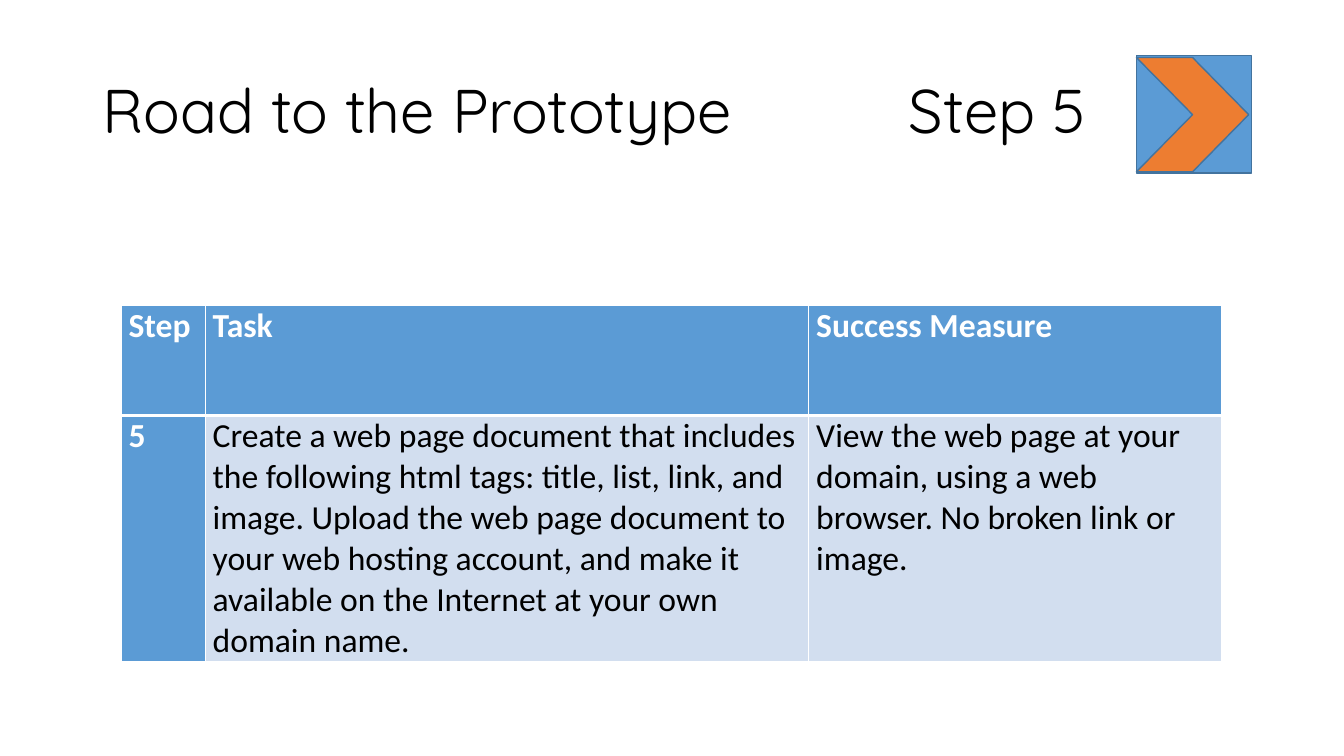
from dataclasses import dataclass

from lxml.etree import SubElement
from pptx import Presentation
from pptx.dml.color import RGBColor
from pptx.enum.shapes import MSO_SHAPE
from pptx.enum.text import MSO_ANCHOR, MSO_AUTO_SIZE, PP_ALIGN
from pptx.oxml.ns import qn
from pptx.util import Cm, Pt

BLUE, ORANGE, OUTLINE = "5B9BD5", "ED7D31", "43739E"
PALE_BLUE, WHITE, BLACK = "D2DEEF", "FFFFFF", "000000"


@dataclass
class IconPart:
    kind: MSO_SHAPE
    left: float
    top: float
    width: float
    height: float
    fill: str


@dataclass
class TableRow:
    height: float
    texts: tuple[str, str, str]
    is_header: bool


ICON_PARTS = [
    IconPart(MSO_SHAPE.ACTION_BUTTON_CUSTOM, 28.64, 1.4, 2.9, 2.96, BLUE),
    IconPart(MSO_SHAPE.CHEVRON, 28.64, 1.45, 2.83, 2.88, ORANGE),
]
COLUMN_WIDTHS = [2.12, 15.21, 10.4]
TABLE_ROWS = [
    TableRow(2.77, ("Step", "Task", "Success Measure"), True),
    TableRow(6.1, (
        "5",
        "Create a web page document that includes the following html tags: "
        "title, list, link, and image. Upload the web page document to your "
        "web hosting account, and make it available on the Internet at your "
        "own domain name.",
        "View the web page at your domain, using a web browser. "
        "No broken link or image.",
    ), False),
]


def color(value: str) -> RGBColor:
    return RGBColor.from_string(value)


def write_text(text_frame, text: str, *, font: str, size: float,
               text_color: str, bold: bool = False):
    paragraph = text_frame.paragraphs[0]
    paragraph.alignment = PP_ALIGN.LEFT
    run = paragraph.add_run()
    run.text = text
    run.font.name = font
    run.font.size = Pt(size)
    run.font.bold = bold
    run.font.color.rgb = color(text_color)
    return paragraph


def add_tab_stops(paragraph, positions: list[float]) -> None:
    tab_list = SubElement(paragraph._p.get_or_add_pPr(), qn("a:tabLst"))
    for position in positions:
        SubElement(tab_list, qn("a:tab"), pos=str(Cm(position)), algn="l")


def add_icon_part(group, part: IconPart) -> None:
    shape = group.shapes.add_shape(part.kind, Cm(part.left), Cm(part.top),
                                   Cm(part.width), Cm(part.height))
    shape.shadow.inherit = False
    shape.fill.solid()
    shape.fill.fore_color.rgb = color(part.fill)
    shape.line.color.rgb = color(OUTLINE)
    shape.line.width = Pt(1)


def set_borders(cell, widths: dict[str, float]) -> None:
    properties = cell._tc.get_or_add_tcPr()
    for index, (side, width) in enumerate(widths.items()):
        line = properties.makeelement(qn(f"a:ln{side}"), {"w": str(Pt(width))})
        fill = SubElement(line, qn("a:solidFill"))
        SubElement(fill, qn("a:srgbClr"), val=WHITE)
        properties.insert(index, line)


def format_cell(cell, text: str, is_heading: bool, is_header: bool) -> None:
    cell.margin_left = cell.margin_right = Cm(0.19)
    cell.margin_top = cell.margin_bottom = 0
    cell.fill.solid()
    cell.fill.fore_color.rgb = color(BLUE if is_heading else PALE_BLUE)
    write_text(cell.text_frame, text, font="Calibri", size=24,
               text_color=WHITE if is_heading else BLACK, bold=is_heading)
    set_borders(cell, {"L": 1, "R": 1, "T": 1 if is_header else 3,
                       "B": 3 if is_header else 1})


def add_task_table(slide) -> None:
    heights = [row.height for row in TABLE_ROWS]
    table = slide.shapes.add_table(
        len(TABLE_ROWS), len(COLUMN_WIDTHS), Cm(3.05), Cm(7.7),
        Cm(sum(COLUMN_WIDTHS)), Cm(sum(heights))).table
    for column, width in zip(table.columns, COLUMN_WIDTHS):
        column.width = Cm(width)
    for row_index, row in enumerate(TABLE_ROWS):
        table.rows[row_index].height = Cm(row.height)
        for column_index, text in enumerate(row.texts):
            format_cell(table.cell(row_index, column_index), text,
                        row.is_header or column_index == 0, row.is_header)


def add_title(slide) -> None:
    title = slide.shapes.title
    title.left, title.top = Cm(2.33), Cm(1.01)
    title.width, title.height = Cm(29.21), Cm(3.68)
    text_frame = title.text_frame
    text_frame.word_wrap = True
    text_frame.auto_size = MSO_AUTO_SIZE.NONE
    text_frame.vertical_anchor = MSO_ANCHOR.MIDDLE
    paragraph = write_text(text_frame, "Road to the Prototype\t\tStep 5",
                           font="Quicksand", size=44, text_color=BLACK)
    paragraph.line_spacing = 0.9
    add_tab_stops(paragraph, [17.78, 20.32])


def main() -> None:
    presentation = Presentation()
    presentation.slide_width, presentation.slide_height = Cm(33.87), Cm(19.05)
    slide = presentation.slides.add_slide(presentation.slide_layouts[5])

    # Title
    add_title(slide)

    # Step icon
    icon = slide.shapes.add_group_shape()
    for part in ICON_PARTS:
        add_icon_part(icon, part)

    # Task table
    add_task_table(slide)

    presentation.save("out.pptx")


if __name__ == "__main__":
    main()
